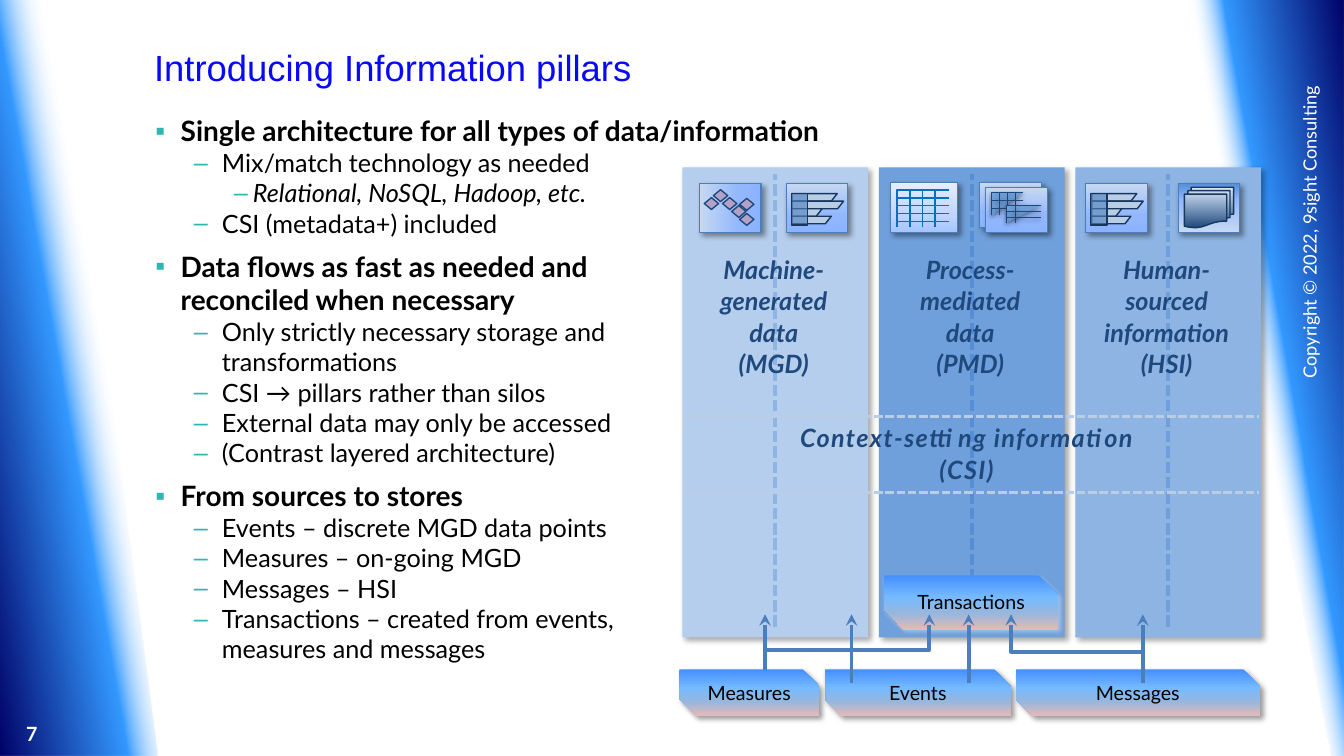
from lxml import etree
from pptx import Presentation
from pptx.dml.color import RGBColor
from pptx.enum.dml import MSO_LINE
from pptx.enum.shapes import MSO_CONNECTOR, MSO_SHAPE
from pptx.enum.text import MSO_ANCHOR, MSO_AUTO_SIZE, PP_ALIGN
from pptx.oxml.ns import qn
from pptx.util import Cm, Pt

RECTANGLE, SNIPPED = MSO_SHAPE.RECTANGLE, MSO_SHAPE.SNIP_2_DIAG_RECTANGLE
DIAMOND, DOCUMENTS = MSO_SHAPE.FLOWCHART_DECISION, MSO_SHAPE.FLOWCHART_MULTIDOCUMENT
STRAIGHT, ELBOW = MSO_CONNECTOR.STRAIGHT, MSO_CONNECTOR.ELBOW
LEFT, CENTER, RIGHT = PP_ALIGN.LEFT, PP_ALIGN.CENTER, PP_ALIGN.RIGHT
TOP, MIDDLE = MSO_ANCHOR.TOP, MSO_ANCHOR.MIDDLE
DASHED = MSO_LINE.SQUARE_DOT

BLACK, WHITE = RGBColor(0, 0, 0), RGBColor(255, 255, 255)
TITLE_BLUE, TEAL = RGBColor(0x09, 0x09, 0xF9), RGBColor(0x2D, 0xB6, 0xB3)
NAVY, DEEP = RGBColor(0x1F, 0x49, 0x7D), RGBColor(0x17, 0x37, 0x5E)
STEEL, GRID_BLUE = RGBColor(0x4B, 0x7E, 0xBC), RGBColor(0x00, 0x70, 0xC0)
PALE, MID, STRONG = (RGBColor(0xB5, 0xCE, 0xED), RGBColor(0x8E, 0xB4, 0xE3),
                     RGBColor(0x6F, 0xA0, 0xDB))
AXIS_BLUE, BAR_BLUE = RGBColor(0x55, 0x8E, 0xD5), RGBColor(0xB9, 0xCD, 0xE5)
SIDE_BLUE, LILAC = RGBColor(0x4F, 0x81, 0xBD), RGBColor(0xB3, 0xA2, 0xC7)
SHADE, LIGHT_SHADE = ("000000", 40, 4, 3, 45), ("F2F2F2", 40, 3, 2, 45)
PILLAR_SHADE, GRID_SHADE = ("000000", 35, 4, 3, 45), ("000000", 38, 3.1, 1.6, 90)

TILE = [(0, "8BB3FF"), (35, "93B7FE"), (100, "C6D9F1")]
GRID_TILE = [(0, "A4C4FF"), (35, "BFD4FF"), (100, "E6EEFF")]
DOCUMENT_TILE = [(0, "558ED5"), (35, "93B7FE"), (100, "C6D9F1")]
DOCUMENT_FILL = [(0, "1F497D"), (80, "B9CDE5"), (100, "DCE6F2")]
SOURCE_FILL = [(0, "438FFF"), (40, "75BAFF"), (70, "97B7DD"), (100, "E6B9B8")]

BANDS = [
    ([(0, 0), (1.52, 0), (3.96, 19.05), (0, 19.05)],
     [(0, "000066"), (44, "3399FF"), (61, "FFFFFF", 0), (99, "FFFFFF", 0)], 350),
    ([(33.87, 0), (29.82, 0), (33.55, 19.05), (33.87, 19.05)],
     [(0, "000066"), (41, "3399FF"), (53, "FFFFFF", 0), (100, "FFFFFF", 0)], 170)]
BULLETS = [
    (0, "Single architecture for all types of data/information"),
    (1, "Mix/match technology as needed"),
    (2, "Relational, NoSQL, Hadoop, etc."),
    (1, "CSI (metadata+) included"),
    (0, "Data flows as fast as needed and \vreconciled when necessary"),
    (1, "Only strictly necessary storage and \vtransformations"),
    (1, "CSI → pillars rather than silos"),
    (1, "External data may only be accessed"),
    (1, "(Contrast layered architecture)"),
    (0, "From sources to stores"),
    (1, "Events – discrete MGD data points"),
    (1, "Measures – on-going MGD"),
    (1, "Messages – HSI"),
    (1, "Transactions – created from events,\vmeasures and messages")]
LEVELS = [("▪", 0.64, -0.64, 20), ("–", 1.68, -0.71, 18), ("–", 2.46, -0.48, 18)]
PILLARS = [("Machine-generated\vdata\n(MGD)", PALE, MID),
           ("Process-mediated\vdata\n(PMD)", STRONG, AXIS_BLUE),
           ("Human-sourced\vinformation\n(HSI)", MID, STRONG)]
PILLAR_LEFT, PILLAR_STEP, PILLAR_TOP, PILLAR_WIDTH, PILLAR_HEIGHT = 17.2, 4.95, 4.22, 4.68, 11.84
TILES = [(17.63, 4.62, 1.55, 1.24, TILE, 180), (19.81, 4.62, 1.55, 1.24, TILE, 270),
         (22.45, 4.6, 1.68, 1.27, GRID_TILE, 270), (24.69, 4.6, 1.55, 1.14, TILE, 270),
         (24.84, 4.72, 1.57, 1.14, TILE, 270), (27.36, 4.62, 1.55, 1.24, TILE, 270),
         (29.69, 4.62, 1.55, 1.24, DOCUMENT_TILE, 90)]
DIAMONDS = [(17.98, 4.78), (18.21, 4.98), (18.44, 5.18), (18.64, 5), (17.75, 4.98), (18.64, 5.38)]
BAR_ICONS, BAR_WIDTHS = [19.81, 27.36], [1.14, 1.3, 0.76, 0.99]
GRIDS = [(22.61, 4.78, 1.3, 0.95, 3, 0.32, 4, 0.2, None, GRID_BLUE, 1.25, None),
         (24.99, 4.85, 0.8, 0.58, 3, 0.2, 2, 0.2, STRONG, NAVY, 0.75, GRID_SHADE),
         (25.37, 5.18, 0.86, 0.43, 1, 0.23, 2, 0.15, STRONG, NAVY, 0.75, GRID_SHADE)]
SOURCES = [("Transactions", 22.28, 14.5, 4.39, 1.37, TOP, LIGHT_SHADE),
           ("Events", 20.78, 16.87, 4.7, 1.17, MIDDLE, SHADE),
           ("Messages", 25.6, 16.87, 6.15, 1.17, MIDDLE, SHADE)]
MEASURES = ("Measures", 17.12, 16.87, 3.53, 1.17, MIDDLE, SHADE)
ARROWS = [19.28, 21.46, 24.41, 28.8]
ARROW_BOTTOM, ARROW_TOP = 17.2, 15.48
ELBOWS = [(19.28, 23.42, 43000), (28.8, 25.48, 40800)]


def set_shadow(effects, shadow):
    if shadow:
        color, alpha, blur, distance, direction = shadow
        outer = etree.SubElement(effects, qn("a:outerShdw"), blurRad=str(Pt(blur)), dist=str(Pt(distance)),
                                 dir=str(direction * 60000), algn="tl", rotWithShape="0")
        node = etree.SubElement(outer, qn("a:srgbClr"), val=color)
        etree.SubElement(node, qn("a:alpha"), val=str(alpha * 1000))


def paint(shape, fill=None, angle=0, line=None, width=1, shadow=None):
    if isinstance(fill, list):
        shape.fill.gradient()
        gradient = shape.element.spPr.find(qn("a:gradFill"))
        stops = gradient.find(qn("a:gsLst"))
        stops[:] = []
        for position, color, *alpha in fill:
            stop = etree.SubElement(stops, qn("a:gs"), pos=str(position * 1000))
            node = etree.SubElement(stop, qn("a:srgbClr"), val=color)
            for value in alpha:
                etree.SubElement(node, qn("a:alpha"), val=str(value * 1000))
        gradient.find(qn("a:lin")).set("ang", str(angle * 60000))
    elif fill is None:
        shape.fill.background()
    else:
        shape.fill.solid()
        shape.fill.fore_color.rgb = fill
    if line is None:
        shape.line.fill.background()
    else:
        shape.line.color.rgb = line
        shape.line.width = Pt(width)
    shape.shadow.inherit = False
    set_shadow(shape.element.spPr.find(qn("a:effectLst")), shadow)
    return shape


def add_box(shapes, kind, left, top, width, height):
    return shapes.add_shape(kind, Cm(left), Cm(top), Cm(width), Cm(height))


def add_outline(shapes, points, close=True):
    corners = [(Cm(x), Cm(y)) for x, y in points]
    builder = shapes.build_freeform(*corners[0])
    builder.add_line_segments(corners[1:], close=close)
    return builder.convert_to_shape()


def add_line(shapes, start, end, color, width, kind=STRAIGHT, dash=None, arrow=False, shadow=None):
    connector = shapes.add_connector(kind, *(Cm(value) for value in start + end))
    connector.line.color.rgb = color
    connector.line.width = Pt(width)
    if dash:
        connector.line.dash_style = dash
    properties = connector.element.spPr
    if arrow:
        etree.SubElement(properties.find(qn("a:ln")), qn("a:tailEnd"), type="stealth")
    set_shadow(etree.SubElement(properties, qn("a:effectLst")), shadow)
    return connector


def add_elbow(shapes, start_x, end_x, bend):
    side = 1 if end_x > start_x else -1
    start_y = 17.07
    half_width, half_height = (start_y - ARROW_TOP) / 2, abs(end_x - start_x) / 2
    x, y = (start_x + end_x) / 2, (start_y + ARROW_TOP) / 2
    elbow = add_line(shapes, (x + side * half_width, y + half_height),
                     (x - side * half_width, y - half_height), STEEL, 2.75, ELBOW, arrow=True)
    properties = elbow.element.spPr
    properties.find(qn("a:xfrm")).set("rot", str(side * 90 % 360 * 60000))
    guides = properties.find(qn("a:prstGeom")).find(qn("a:avLst"))
    etree.SubElement(guides, qn("a:gd"), name="adj1", fmla=f"val {bend}")


def write(shape, text, size, color, align=CENTER, bold=None, italic=None, font="Lato", spacing=None, tracking=None):
    frame = shape.text_frame
    frame.text = text
    for paragraph in frame.paragraphs:
        paragraph.alignment = align
        paragraph.line_spacing = spacing
        for run in paragraph.runs:
            run.font.name, run.font.size = font, Pt(size)
            run.font.bold, run.font.italic = bold, italic
            run.font.color.rgb = color
            if tracking:
                run.font._element.set("spc", str(tracking))
    return frame


def add_text(shapes, left, top, width, height, text, *style, **options):
    box = shapes.add_textbox(Cm(left), Cm(top), Cm(width), Cm(height))
    write(box, text, *style, **options).word_wrap = True
    return box


def add_source(shapes, text, left, top, width, height, anchor, shadow):
    box = paint(add_box(shapes, SNIPPED, left, top, width, height), SOURCE_FILL, 90, shadow=shadow)
    box.adjustments[1] = 0.358
    frame = write(box, text, 14, BLACK)
    frame.vertical_anchor = anchor
    frame.margin_left = frame.margin_right = 0


def place(placeholder, left, top, width, height):
    placeholder.left, placeholder.top, placeholder.width, placeholder.height = map(Cm, (left, top, width, height))
    placeholder.text_frame.vertical_anchor = TOP
    placeholder.text_frame.auto_size = MSO_AUTO_SIZE.NONE


def fill_body(body):
    frame = write(body, "\n".join(text for _, text in BULLETS), 18, BLACK, LEFT)
    for index, (paragraph, (level, _)) in enumerate(zip(frame.paragraphs, BULLETS)):
        mark, margin, indent, size = LEVELS[level]
        paragraph.level = level
        properties = paragraph._p.get_or_add_pPr()
        properties.set("marL", str(Cm(margin)))
        properties.set("indent", str(Cm(indent)))
        color = etree.SubElement(properties, qn("a:buClr"))
        etree.SubElement(color, qn("a:srgbClr"), val=str(TEAL))
        etree.SubElement(properties, qn("a:buChar"), char=mark)
        paragraph.space_before = Pt(8 if level == 0 and index else 0)
        for run in paragraph.runs:
            run.font.size, run.font.bold, run.font.italic = Pt(size), level == 0, level == 2


def draw_icons(shapes):
    for left, top, width, height, stops, angle in TILES:
        paint(add_box(shapes, RECTANGLE, left, top, width, height), stops, angle, STEEL, 0.75, SHADE)
    for left, top in DIAMONDS:
        paint(add_box(shapes, DIAMOND, left, top, 0.36, 0.3), LILAC, line=NAVY)
    for left in BAR_ICONS:
        for row, width in enumerate(BAR_WIDTHS):
            x, y = left + 0.15, 4.88 + row * 0.19
            bar = [(x, y), (x + width, y), (x + width - 0.15, y + 0.19), (x, y + 0.19)]
            paint(add_outline(shapes, bar), BAR_BLUE, line=DEEP)
        side = paint(add_box(shapes, RECTANGLE, left + 0.13, 4.88, 0.41, 0.79), SIDE_BLUE, line=DEEP)
        color = side.element.spPr.find(qn("a:solidFill"))[0]
        etree.SubElement(color, qn("a:alpha"), val="63000")
    for x, y, width, height, columns, column_step, rows, row_step, fill, color, weight, shadow in GRIDS:
        corner = add_outline(shapes, [(x, y + height), (x, y), (x + width, y)], False)
        paint(corner, fill, line=color, width=weight, shadow=shadow)
        ends = [((x + i * column_step, y + height), (x + i * column_step, y)) for i in range(1, columns + 1)]
        ends += [((x + width, y + i * row_step), (x, y + i * row_step)) for i in range(1, rows + 1)]
        for start, end in ends:
            add_line(shapes, start, end, color, weight, shadow=shadow)
    paint(add_box(shapes, DOCUMENTS, 29.85, 4.72, 1.24, 1.02), DOCUMENT_FILL, 270, DEEP)


def main():
    """Build the information pillars slide."""
    presentation = Presentation()
    presentation.slide_width, presentation.slide_height = Cm(33.87), Cm(19.05)
    slide = presentation.slides.add_slide(presentation.slide_layouts[1])
    shapes = slide.shapes
    title, body = slide.placeholders
    place(title, 3.63, 1.14, 27.94, 2.57)
    write(title, "Introducing Information pillars", 26, TITLE_BLUE, LEFT, font="Arial", spacing=0.9)
    place(body, 3.66, 2.74, 17.55, 14.78)
    fill_body(body)
    for points, stops, angle in BANDS:
        paint(add_outline(shapes, points), stops, angle)
    add_text(shapes, 0.41, 18.06, 2.39, 0.81, "7", 14, WHITE, LEFT, bold=True)
    notice = add_text(shapes, 28.45, 6.07, 9.04, 0.74, "Copyright © 2022, 9sight Consulting", 13, WHITE, RIGHT)
    notice.rotation = 270
    label_style = dict(bold=True, italic=True, spacing=1.04)
    for index, (label, fill, axis) in enumerate(PILLARS):
        left = PILLAR_LEFT + index * PILLAR_STEP
        middle = left + PILLAR_WIDTH / 2
        pillar = add_box(shapes, RECTANGLE, left, PILLAR_TOP, PILLAR_WIDTH, PILLAR_HEIGHT)
        paint(pillar, fill, shadow=PILLAR_SHADE)
        add_line(shapes, (middle, 15.8), (middle, 4.39), axis, 2.75, dash=DASHED)
        add_text(shapes, left, 6.25, 4.6, 3.86, label, 18, NAVY, **label_style)
    draw_icons(shapes)
    for source in SOURCES:
        add_source(shapes, *source)
    for x in ARROWS:
        add_line(shapes, (x, ARROW_BOTTOM), (x, ARROW_TOP), STEEL, 2.75, arrow=True)
    for elbow in ELBOWS:
        add_elbow(shapes, *elbow)
    add_source(shapes, *MEASURES)
    for y in (10.49, 12.4):
        add_line(shapes, (17.2, y), (31.72, y), BAR_BLUE, 2, dash=DASHED)
    add_text(shapes, 18.11, 10.49, 12.5, 2.03, "Context-setting information\n(CSI)", 18, NAVY,
             tracking=100, **label_style)
    presentation.save("out.pptx")


if __name__ == "__main__":
    main()
